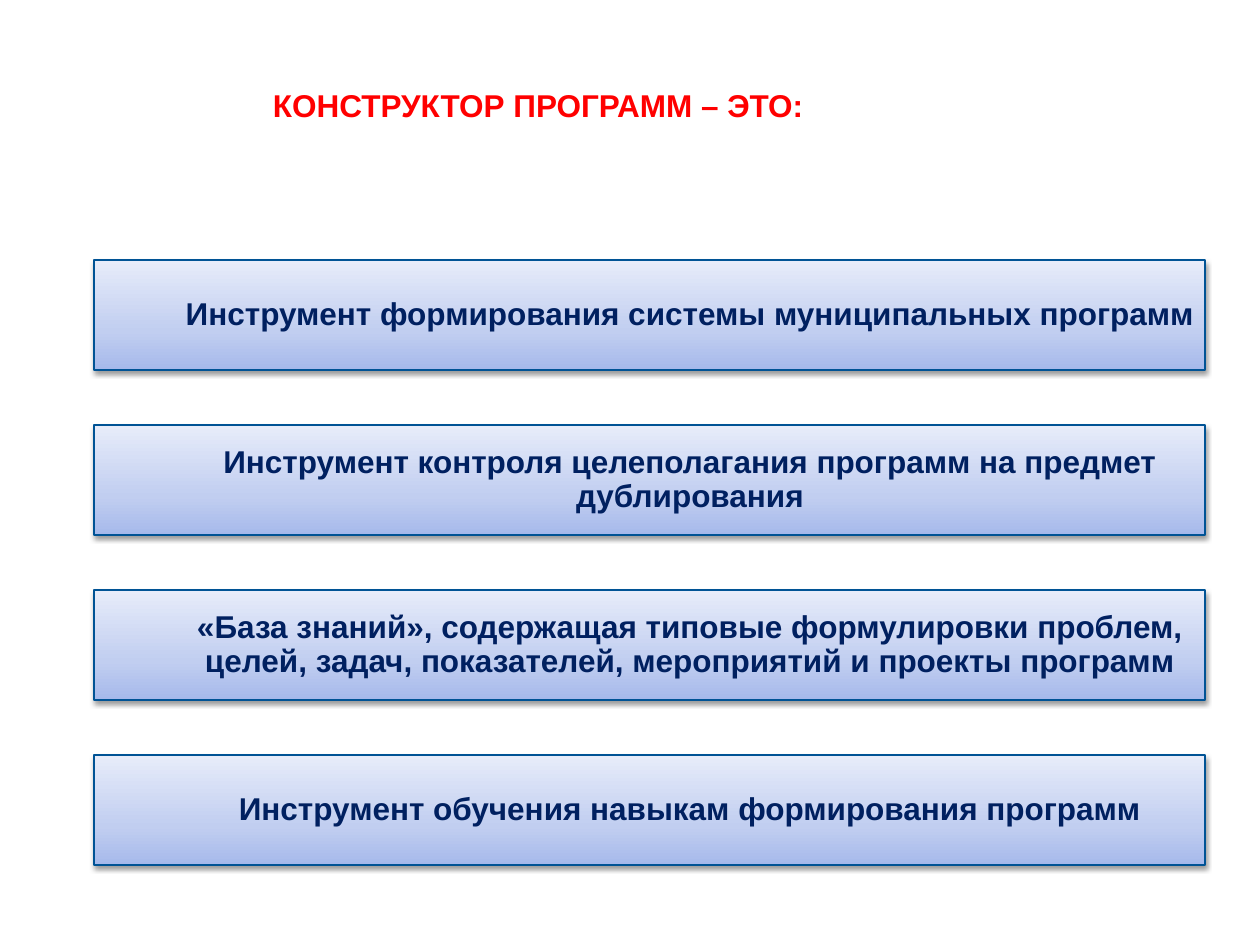
import copy

import pptx
import pptx.dml.color
import pptx.enum.shapes
import pptx.enum.text
import pptx.oxml
import pptx.oxml.ns
import pptx.util

TITLE = "КОНСТРУКТОР ПРОГРАММ – ЭТО:"
TOOLS = [
    "Инструмент формирования системы муниципальных программ",
    "Инструмент контроля целеполагания программ на предмет дублирования",
    "«База знаний», содержащая типовые формулировки проблем, "
    "целей, задач, показателей, мероприятий и проекты программ",
    "Инструмент обучения навыкам формирования программ",
]

COLORS = {"title": "FF0000", "text": "002060", "line": "005395", "shadow": "000000"}
GRADIENT = [(0, "A6B9EB"), (0.35, "C1CEF0"), (1, "E7ECFA")]

SLIDE_SIZE = (1260, 945)
TITLE_AREA = (273, 86, 925, 118)
BAR_LEFT, BAR_TOP, BAR_WIDTH, BAR_HEIGHT, BAR_GAP = 94, 260, 1111, 110, 55
BAR_INSETS = (87, 6, 6, 6)

SHADOW = (
    f'<a:outerShdw {pptx.oxml.ns.nsdecls("a")} blurRad="40000" dist="20000" '
    'dir="5400000" rotWithShape="0">'
    f'<a:srgbClr val="{COLORS["shadow"]}"><a:alpha val="38000"/></a:srgbClr>'
    "</a:outerShdw>"
)


def px(value):
    return pptx.util.Emu(round(value * 914400 / 126))


def rgb(value):
    return pptx.dml.color.RGBColor.from_string(value)


def write(box, text, color, align, anchor, insets, space_after):
    frame = box.text_frame
    frame.word_wrap = True
    frame.auto_size = pptx.enum.text.MSO_AUTO_SIZE.NONE
    frame.vertical_anchor = anchor
    (frame.margin_left, frame.margin_top,
     frame.margin_right, frame.margin_bottom) = map(px, insets)
    para = frame.paragraphs[0]
    para.alignment = align
    para.space_before = pptx.util.Pt(0)
    para.space_after = pptx.util.Pt(space_after)
    span = para.add_run()
    span.text = text
    span.font.name = "Arial"
    span.font.size = pptx.util.Pt(18)
    span.font.bold = True
    span.font.color.rgb = rgb(color)
    return para


def paint(bar):
    bar.fill.gradient()
    bar.fill.gradient_angle = 90
    stop_list = bar.element.spPr.find(".//" + pptx.oxml.ns.qn("a:gsLst"))
    stop_list.append(copy.deepcopy(stop_list[0]))
    for stop, (position, color) in zip(bar.fill.gradient_stops, GRADIENT):
        stop.position = position
        stop.color.rgb = rgb(color)
    bar.line.color.rgb = rgb(COLORS["line"])
    bar.line.width = pptx.util.Pt(0.75)
    bar.shadow.inherit = False
    effects = bar.element.spPr.find(pptx.oxml.ns.qn("a:effectLst"))
    effects.append(pptx.oxml.parse_xml(SHADOW))


def main():
    deck = pptx.Presentation()
    deck.slide_width, deck.slide_height = map(px, SLIDE_SIZE)
    page = deck.slides.add_slide(deck.slide_layouts[5])
    align = pptx.enum.text.PP_ALIGN
    anchor = pptx.enum.text.MSO_ANCHOR

    title = page.shapes.title
    title.left, title.top, title.width, title.height = map(px, TITLE_AREA)
    write(title, TITLE, COLORS["title"], align.LEFT, anchor.TOP, (0, 0, 0, 0), 3)

    for row, text in enumerate(TOOLS):
        top = BAR_TOP + row * (BAR_HEIGHT + BAR_GAP)
        bar = page.shapes.add_shape(
            pptx.enum.shapes.MSO_SHAPE.RECTANGLE,
            *map(px, (BAR_LEFT, top, BAR_WIDTH, BAR_HEIGHT)))
        paint(bar)
        para = write(bar, text, COLORS["text"], align.CENTER, anchor.MIDDLE,
                     BAR_INSETS, 6.3)
        para.line_spacing = 0.9

    deck.save("out.pptx")


if __name__ == "__main__":
    main()
